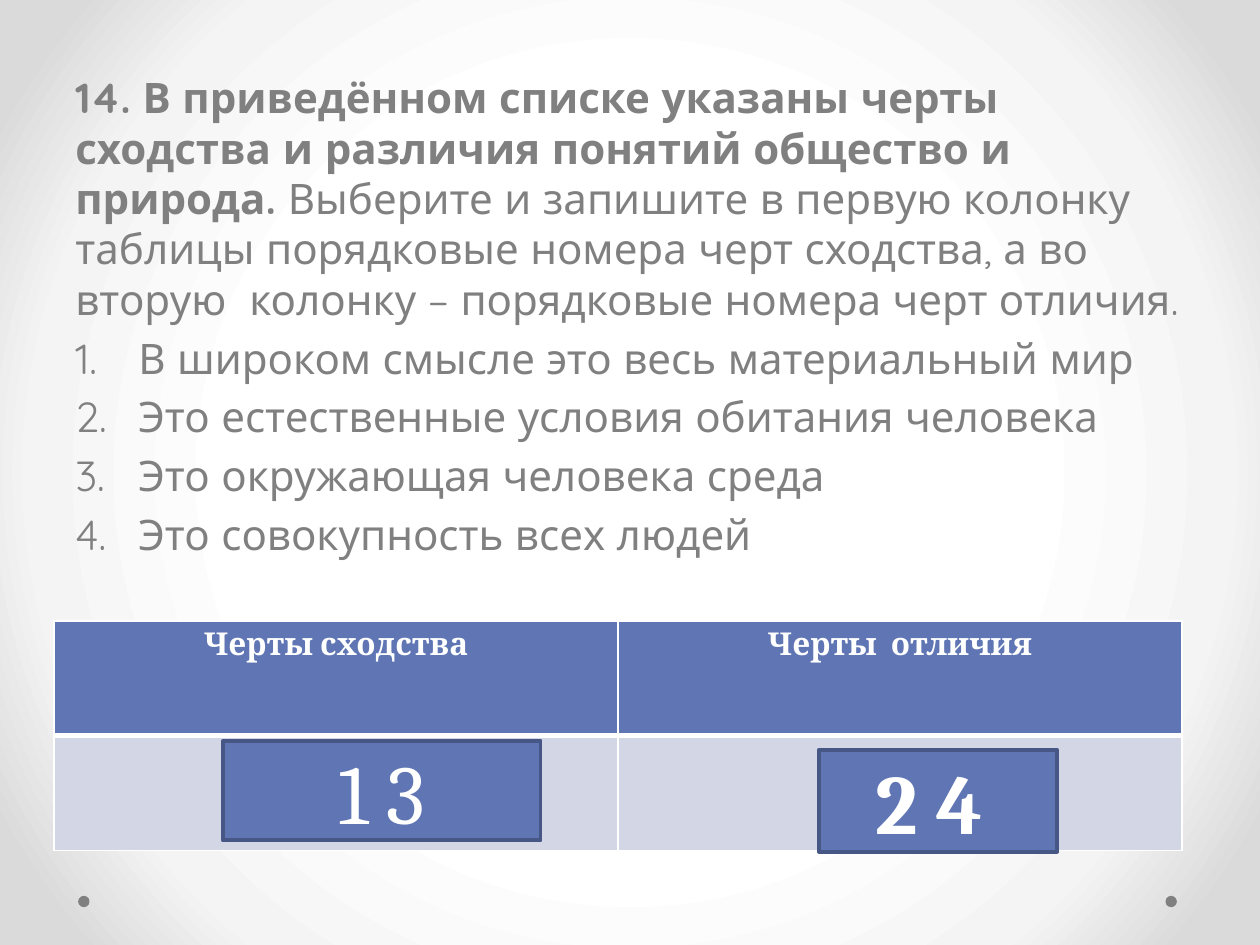
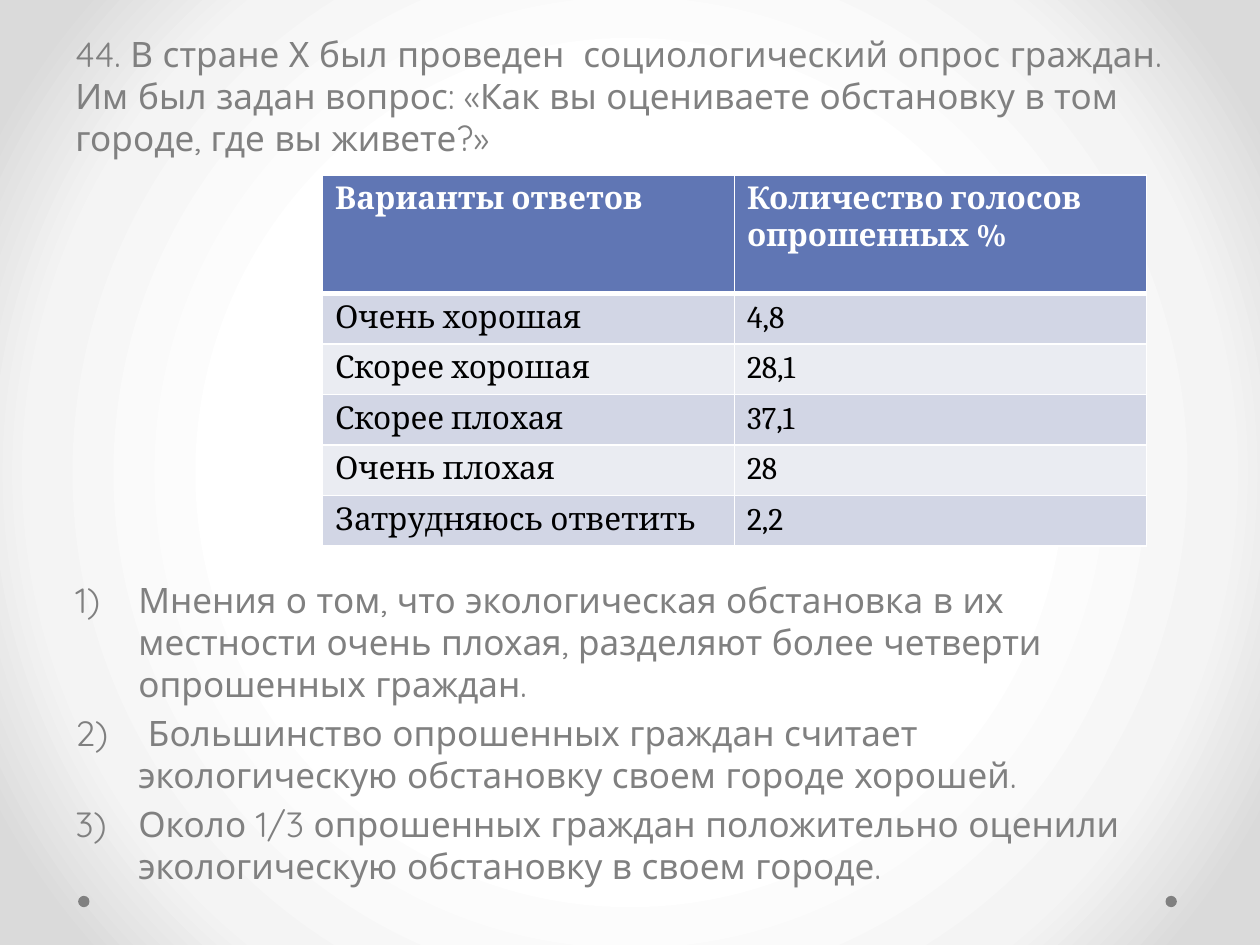
from lxml.etree import SubElement
from pptx import Presentation
from pptx.dml.color import RGBColor
from pptx.enum.shapes import MSO_SHAPE
from pptx.enum.text import MSO_ANCHOR, PP_ALIGN
from pptx.oxml import parse_xml
from pptx.oxml.ns import nsdecls, qn
from pptx.util import Inches, Pt

COLUMNS, ROWS = 100, 75
WIDTH, HEIGHT = Inches(10), Inches(7.5)


def rgb(code):
    """Turn a hex string into a colour."""
    return RGBColor.from_string(code)


class Deck:
    """Holds the style and the current slide and draws each kind of element."""

    BODY_FONT, TABLE_FONT = "Quicksand", "Cambria"
    GREY, WHITE, BLACK = "808080", "FFFFFF", "000000"
    ACCENT, ACCENT_EDGE = "6076B4", "475785"
    BANDS = ("D2D6E5", "EAECF2")
    GLOW = ((50, "FFFFFF"), (76, "F4F4F4"), (92, "DADADA"))

    def __init__(self):
        """Start an empty presentation of the right size."""
        self.presentation = Presentation()
        self.presentation.slide_width = WIDTH
        self.presentation.slide_height = HEIGHT
        self.slide = None

    def place(self, column, row, columns, rows):
        """Convert grid units into left, top, width and height."""
        across, down = WIDTH / COLUMNS, HEIGHT / ROWS
        return int(column * across), int(row * down), int(columns * across), int(rows * down)

    def new_slide(self):
        """Add a slide with the glowing background and the two footer dots."""
        self.slide = self.presentation.slides.add_slide(self.presentation.slide_layouts[6])
        stops = "".join(
            f'<a:gs pos="{share * 1000}"><a:srgbClr val="{code}"/></a:gs>'
            for share, code in self.GLOW
        )
        background = parse_xml(
            f'<p:bg {nsdecls("p", "a")}><p:bgPr><a:gradFill rotWithShape="1">'
            f'<a:gsLst>{stops}</a:gsLst><a:path path="circle">'
            '<a:fillToRect l="50000" t="50000" r="50000" b="50000"/></a:path>'
            '</a:gradFill><a:effectLst/></p:bgPr></p:bg>'
        )
        self.slide.element.find(qn("p:cSld")).insert(0, background)
        for column in (6.2, 92.5):
            self.shape(MSO_SHAPE.OVAL, (column, 71.1, 0.9, 0.9), self.GREY)

    def shape(self, kind, area, fill, edge=None):
        """Draw a flat preset shape, with an outline if asked."""
        figure = self.slide.shapes.add_shape(kind, *self.place(*area))
        figure.shadow.inherit = False
        figure.fill.solid()
        figure.fill.fore_color.rgb = rgb(fill)
        if edge:
            figure.line.color.rgb = rgb(edge)
            figure.line.width = Pt(2.25)
        else:
            figure.line.fill.background()
        return figure

    def run(self, paragraph, words, size, font, color, bold=False):
        """Append one styled run to a paragraph."""
        piece = paragraph.add_run()
        piece.text = words
        piece.font.size = Pt(size)
        piece.font.name = font
        piece.font.bold = bold
        piece.font.color.rgb = rgb(color)

    def answer(self, area, digits, bold=False):
        """Draw an answer plate with large digits."""
        plate = self.shape(MSO_SHAPE.RECTANGLE, area, self.ACCENT, self.ACCENT_EDGE)
        plate.text_frame.vertical_anchor = MSO_ANCHOR.MIDDLE
        line = plate.text_frame.paragraphs[0]
        line.alignment = PP_ALIGN.CENTER
        self.run(line, digits, 48, self.TABLE_FONT, self.WHITE, bold)

    def body(self, area, size, question=(), statements=(), numbering="arabicPeriod"):
        """Write a question of (words, bold) runs and numbered statements."""
        frame = self.slide.shapes.add_textbox(*self.place(*area)).text_frame
        frame.word_wrap = True
        items = [(question, False)] if question else []
        items += [([(words, False)], True) for words in statements]
        for index, (pieces, numbered) in enumerate(items):
            paragraph = frame.add_paragraph() if index else frame.paragraphs[0]
            if index:
                paragraph.space_before = Pt(size * 0.2)
            if numbered:
                properties = paragraph._p.get_or_add_pPr()
                properties.set("marL", str(Inches(0.5)))
                properties.set("indent", str(-Inches(0.5)))
                SubElement(properties, qn("a:buAutoNum"), type=numbering)
            for words, bold in pieces:
                self.run(paragraph, words, size, self.BODY_FONT, self.GREY, bold)

    def borders(self, cell, row):
        """Give a cell white borders, thicker under the header."""
        for index, side in enumerate("LRTB"):
            heavy = (side, row) in (("B", 0), ("T", 1))
            edge = parse_xml(
                f'<a:ln{side} {nsdecls("a")} w="{Pt(3 if heavy else 1)}"><a:solidFill>'
                f'<a:srgbClr val="{self.WHITE}"/></a:solidFill></a:ln{side}>'
            )
            cell._tc.get_or_add_tcPr().insert(index, edge)

    def table(self, area, records, heights, alignment=PP_ALIGN.LEFT):
        """Draw a banded table whose first record is the header."""
        grid = self.slide.shapes.add_table(
            len(records), len(records[0]), *self.place(*area)
        ).table
        grid.horz_banding = False
        for row, (record, height) in enumerate(zip(records, heights)):
            grid.rows[row].height = int(height * HEIGHT / ROWS)
            header = row == 0
            for column, words in enumerate(record):
                cell = grid.cell(row, column)
                cell.fill.solid()
                cell.fill.fore_color.rgb = rgb(self.ACCENT if header else self.BANDS[(row - 1) % 2])
                self.borders(cell, row)
                if words:
                    paragraph = cell.text_frame.paragraphs[0]
                    paragraph.alignment = alignment
                    color = self.WHITE if header else self.BLACK
                    self.run(paragraph, words, 18, self.TABLE_FONT, color, header)


def concepts_slide(deck):
    """Build the task on society and nature."""
    deck.new_slide()
    deck.body(
        (5, 5.2, 90, 41), 24,
        question=[
            ("14. В приведённом списке указаны черты сходства и различия "
             "понятий общество и природа. ", True),
            ("Выберите и запишите в первую колонку таблицы порядковые номера черт "
             "сходства, а во вторую  колонку – порядковые номера черт отличия.", False),
        ],
        statements=[
            "В широком смысле это весь материальный мир",
            "Это естественные условия обитания человека",
            "Это окружающая человека среда",
            "Это совокупность всех людей",
        ],
    )
    deck.table(
        (4.3, 49.3, 89.5, 18.2),
        [("Черты сходства", "Черты  отличия"), ("", "")],
        [9.1] * 2, PP_ALIGN.CENTER,
    )
    deck.answer((17.7, 58.8, 25.2, 7.9), "1 3")
    deck.answer((65, 59.5, 18.9, 8.1), "2 4 ", bold=True)


def survey_slide(deck):
    """Build the task on the opinion poll."""
    deck.new_slide()
    deck.body(
        (5, 2.1, 90, 11), 20,
        question=[
            ("44. В стране Х был проведен  социологический опрос граждан. Им был задан "
             "вопрос: «Как вы оцениваете обстановку в том городе, где вы живете?»", False),
        ],
    )
    votes = [
        ("Варианты ответов", "Количество голосов опрошенных %"),
        ("Очень хорошая", "4,8"),
        ("Скорее хорошая", "28,1"),
        ("Скорее плохая", "37,1"),
        ("Очень плохая", "28"),
        ("Затрудняюсь ответить", "2,2"),
    ]
    deck.table((25.6, 13.9, 65.4, 29.4), votes, [9.4] + [4] * 5)
    deck.body(
        (5, 45.4, 90, 26), 20,
        statements=[
            "Мнения о том, что экологическая обстановка в их местности очень плохая, "
            "разделяют более четверти опрошенных граждан.",
            " Большинство опрошенных граждан считает экологическую обстановку "
            "своем городе хорошей.",
            "Около 1/3 опрошенных граждан положительно оценили экологическую "
            "обстановку в своем городе.",
        ],
        numbering="arabicParenR",
    )


def main():
    """Build both slides and save the file."""
    deck = Deck()
    concepts_slide(deck)
    survey_slide(deck)
    deck.presentation.save("out.pptx")


if __name__ == "__main__":
    main()
